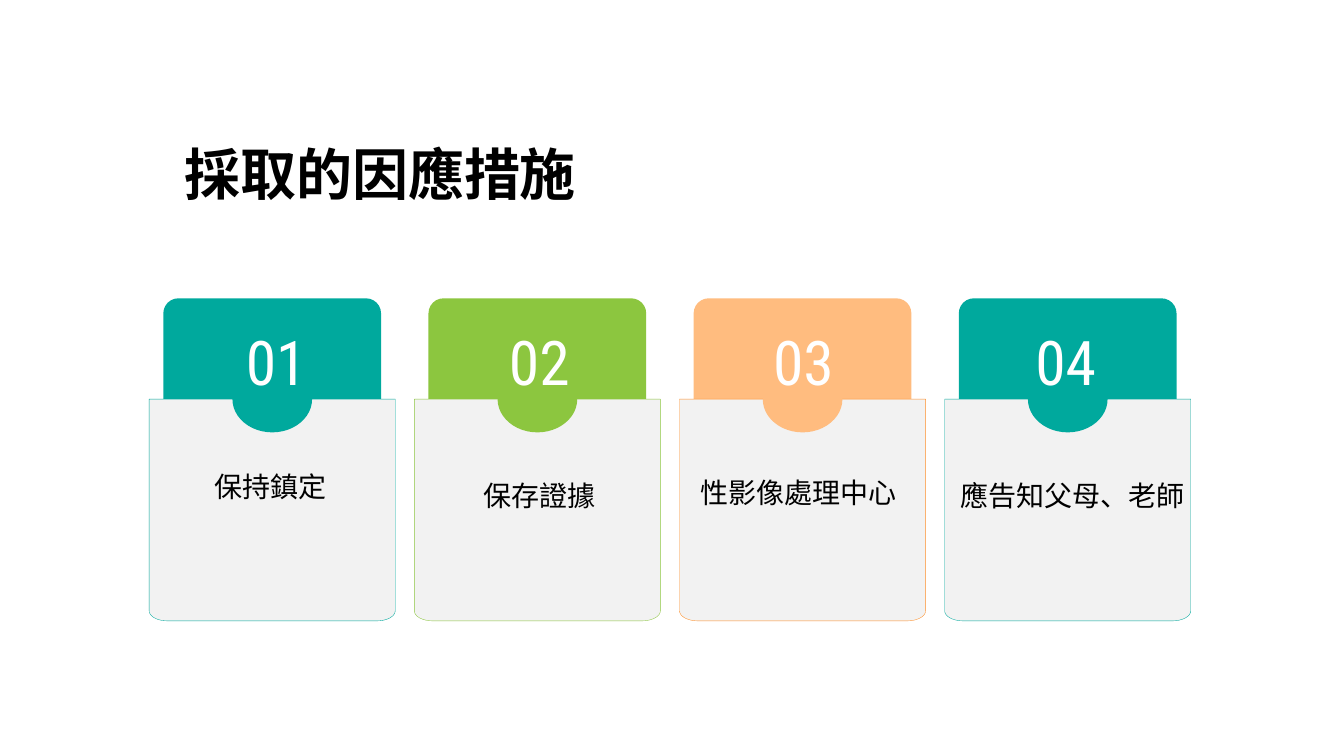
from dataclasses import dataclass
from math import cos, pi, sin

from lxml.etree import SubElement
from pptx import Presentation
from pptx.dml.color import RGBColor
from pptx.enum.shapes import MSO_SHAPE as SHAPE
from pptx.enum.text import MSO_ANCHOR as ANCHOR, MSO_AUTO_SIZE as AUTO, PP_ALIGN as ALIGN
from pptx.oxml.ns import qn
from pptx.util import Inches, Pt


@dataclass(frozen=True)
class Theme:
    """Colours, fonts and type sizes of the slide."""
    teal: str = "00A99D"
    green: str = "8CC63F"
    peach: str = "FFBC7F"
    orange: str = "FF8F29"
    panel: str = "F2F2F2"
    black: str = "000000"
    white: str = "FFFFFF"
    cjk: str = "Noto Sans CJK SC"
    digits: str = "Roboto Condensed"
    title_size: int = 40
    number_size: int = 44
    caption_size: int = 20
    caption_leading: int = 30


T = Theme()
CARD_LEFT, CARD_TOP, CARD_PITCH = 1.48, 2.96, 2.63
PANEL_W, PANEL_H, PANEL_DROP = 2.44, 2.2, 1.0
TAB_W, TAB_H = 2.16, 1.66
KNOB_W, KNOB_H, KNOB_DROP = 0.79, 0.66, 0.67
CORNER_W, CORNER_H = 0.18, 0.1

CARDS = [
    (T.teal, T.teal, 1.26, "保持鎮定", (1.2, 1.57, 2.63)),
    (T.green, T.green, 1.24, "保存證據", (1.24, 1.65, 2.06)),
    (T.peach, T.orange, 1.23, "性影像處理中心", (1.18, 1.62, 2.51)),
    (T.teal, T.teal, 1.2, "應告知父母、老師", (1.27, 1.65, 2.65)),
]


def add_text(s, box, text, font, size, color, bold=False, leading=None):
    """Add a centred one-line text box and return its frame."""
    tf = s.shapes.add_textbox(*map(Inches, box)).text_frame
    tf.word_wrap = True
    tf.auto_size = AUTO.SHAPE_TO_FIT_TEXT
    p = tf.paragraphs[0]
    p.text = text
    p.alignment = ALIGN.CENTER
    if leading:
        p.line_spacing = Pt(leading)
    p.font.size = Pt(size)
    p.font.bold = bold
    p.font.color.rgb = RGBColor.from_string(color)
    p.font.name = font
    SubElement(p._p.pPr.find(qn("a:defRPr")), qn("a:ea"), typeface=font)
    return tf


def paint(sp, fill, line=None):
    """Give a shape a flat fill and an optional hairline."""
    sp.shadow.inherit = False
    sp.fill.solid()
    sp.fill.fore_color.rgb = RGBColor.from_string(fill)
    if line:
        sp.line.color.rgb = RGBColor.from_string(line)
        sp.line.width = Pt(0.25)
    else:
        sp.line.fill.background()


def add_panel(s, x, y, w, h, line):
    """Add the card body, square above and rounded below."""
    angles = [i * pi / 24 for i in range(13)]
    right = [(x + w - CORNER_W * (1 - cos(a)), y + h - CORNER_H * (1 - sin(a)))
             for a in angles]
    left = [(2 * x + w - px, py) for px, py in reversed(right)]
    points = [(Inches(px), Inches(py)) for px, py in [(x + w, y), *right, *left]]
    builder = s.shapes.build_freeform(Inches(x), Inches(y), scale=1.0)
    builder.add_line_segments(points, close=True)
    paint(builder.convert_to_shape(), T.panel, line)


def add_card(s, x, y, number, card):
    """Add a numbered card whose panel starts at x and whose tab starts at y."""
    color, line, number_mid, caption, (caption_mid, caption_drop, caption_w) = card
    mid = x + PANEL_W / 2
    tab = s.shapes.add_shape(SHAPE.ROUNDED_RECTANGLE, Inches(mid - TAB_W / 2),
                             Inches(y), Inches(TAB_W), Inches(TAB_H))
    tab.adjustments[0] = 0.09
    paint(tab, color)
    add_panel(s, x, y + PANEL_DROP, PANEL_W, PANEL_H, line)
    knob = s.shapes.add_shape(SHAPE.OVAL, Inches(mid - KNOB_W / 2),
                              Inches(y + KNOB_DROP), Inches(KNOB_W), Inches(KNOB_H))
    paint(knob, color)
    add_text(s, (x + number_mid - 0.6, y + 0.2, 1.2, 0.84), f"{number:02d}",
             T.digits, T.number_size, T.white)
    add_text(s, (x + caption_mid - caption_w / 2, y + caption_drop, caption_w, 0.48),
             caption, T.cjk, T.caption_size, T.black, leading=T.caption_leading)


def add_title(s, box):
    """Add the slide heading without insets."""
    tf = add_text(s, box, "採取的因應措施", T.cjk, T.title_size, T.black, bold=True)
    tf.vertical_anchor = ANCHOR.MIDDLE
    tf.margin_left = tf.margin_right = tf.margin_top = tf.margin_bottom = 0


def main():
    """Build the slide and save it."""
    prs = Presentation()
    prs.slide_width, prs.slide_height = Inches(13.33), Inches(7.5)
    s = prs.slides.add_slide(prs.slide_layouts[6])
    add_title(s, (0.66, 1.38, 6.22, 0.67))
    for i, card in enumerate(CARDS):
        add_card(s, CARD_LEFT + i * CARD_PITCH, CARD_TOP, i + 1, card)
    prs.save("out.pptx")


if __name__ == "__main__":
    main()
